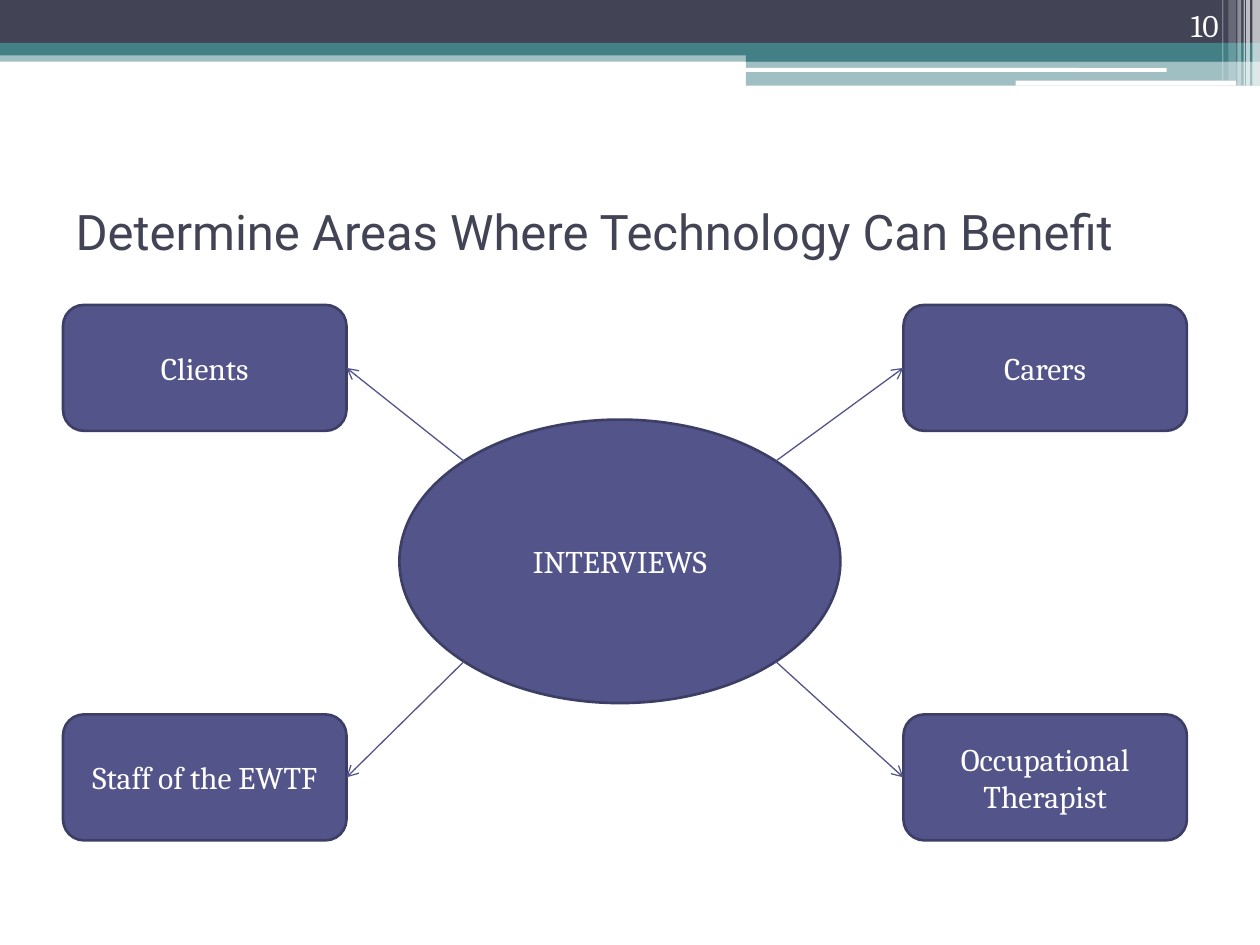
from dataclasses import dataclass
from math import sqrt

from lxml import etree
from pptx import Presentation
from pptx.dml.color import RGBColor
from pptx.enum.shapes import MSO_CONNECTOR, MSO_SHAPE
from pptx.enum.text import MSO_ANCHOR, PP_ALIGN
from pptx.oxml.ns import qn
from pptx.shapes.autoshape import Shape
from pptx.shapes.shapetree import SlideShapes
from pptx.util import Inches, Pt

RECT, ROUND, OVAL = MSO_SHAPE.RECTANGLE, MSO_SHAPE.ROUNDED_RECTANGLE, MSO_SHAPE.OVAL
STRAIGHT = MSO_CONNECTOR.STRAIGHT
LEFT, CENTER, RIGHT = PP_ALIGN.LEFT, PP_ALIGN.CENTER, PP_ALIGN.RIGHT
MIDDLE, BOTTOM = MSO_ANCHOR.MIDDLE, MSO_ANCHOR.BOTTOM
LEFT_SIDE, RIGHT_SIDE = 1, 3


@dataclass(frozen=True)
class Theme:
    dark: str = "424456"
    teal: str = "438086"
    white: str = "FFFFFF"
    node: str = "53548A"
    edge: str = "3D3E66"
    head: str = "Roboto"
    body: str = "Cambria"
    head_size: int = 28
    body_size: int = 18
    edge_width: float = 1.5
    arrow_width: float = 0.75


@dataclass(frozen=True)
class Box:
    left: float
    top: float
    width: float
    height: float

    def lengths(self) -> list[int]:
        return [Inches(v) for v in (self.left, self.top, self.width, self.height)]


@dataclass(frozen=True)
class Band:
    box: Box
    color: str
    alpha: int = 100
    kind: MSO_SHAPE = RECT


@dataclass(frozen=True)
class Node:
    text: str
    across: int  # -1 left of the hub, 1 right of it
    down: int  # -1 above the hub, 1 below it


THEME = Theme()
HUB = Box(3.17, 3.33, 3.5, 2.25)
NODE_SIZE = (2.25, 1)
NODE_LEFT = {-1: 0.5, 1: 7.17}
NODE_TOP = {-1: 2.42, 1: 5.67}

BANDS = [
    Band(Box(0, 0.4, 10, 0.09), THEME.teal, 50),
    Band(Box(0, 0, 10, 0.34), THEME.dark),
    Band(Box(0, 0.34, 10, 0.1), THEME.teal),
    Band(Box(5.92, 0.39, 4.08, 0.1), THEME.teal),
    Band(Box(5.92, 0.48, 4.08, 0.2), THEME.teal, 50),
    Band(Box(5.91, 0.54, 3.35, 0.03), THEME.white, kind=ROUND),
    Band(Box(8.06, 0.64, 1.75, 0.04), THEME.white, kind=ROUND),
]
# Thin upright stripes at the right edge: left, width, height, opacity
STRIPES = [
    (9.94, 0.06, 0.68, 65),
    (9.89, 0.03, 0.68, 65),
    (9.87, 0.01, 0.68, 60),
    (9.82, 0.03, 0.68, 40),
    (9.75, 0.06, 0.64, 20),
    (9.7, 0.01, 0.64, 30),
]
NODES = [
    Node("Clients", -1, -1),
    Node("Carers", 1, -1),
    Node("Staff of the EWTF", -1, 1),
    Node("Occupational Therapist", 1, 1),
]


def rgb(color: str) -> RGBColor:
    return RGBColor.from_string(color)


def write(shape: Shape, text: str, color: str = THEME.white, face: str = THEME.body,
          size: int = THEME.body_size, align: PP_ALIGN = CENTER,
          anchor: MSO_ANCHOR = MIDDLE) -> None:
    frame = shape.text_frame
    frame.word_wrap = True
    frame.vertical_anchor = anchor
    para = frame.paragraphs[0]
    para.alignment = align
    run = para.add_run()
    run.text = text
    for name, value in {"name": face, "size": Pt(size), "bold": False}.items():
        setattr(run.font, name, value)
    run.font.color.rgb = rgb(color)


def add_band(shapes: SlideShapes, band: Band) -> None:
    shape = shapes.add_shape(band.kind, *band.box.lengths())
    shape.shadow.inherit = False
    shape.line.fill.background()
    shape.fill.solid()
    shape.fill.fore_color.rgb = rgb(band.color)
    if band.alpha < 100:
        tint = shape.fill._xPr.find(f".//{qn('a:srgbClr')}")
        etree.SubElement(tint, qn("a:alpha"), val=str(band.alpha * 1000))


def add_node(shapes: SlideShapes, kind: MSO_SHAPE, box: Box, text: str) -> Shape:
    shape = shapes.add_shape(kind, *box.lengths())
    shape.shadow.inherit = False
    shape.fill.solid()
    shape.fill.fore_color.rgb = rgb(THEME.node)
    shape.line.color.rgb = rgb(THEME.edge)
    shape.line.width = Pt(THEME.edge_width)
    write(shape, text)
    return shape


def add_arrow(shapes: SlideShapes, node: Node, goal: Shape) -> None:
    # Start on the hub's outline, at its diagonal point facing the node
    x = HUB.left + HUB.width / 2 * (1 + node.across / sqrt(2))
    y = HUB.top + HUB.height / 2 * (1 + node.down / sqrt(2))
    start = Inches(x), Inches(y)
    arrow = shapes.add_connector(STRAIGHT, *start, *start)
    arrow.end_connect(goal, RIGHT_SIDE if node.across < 0 else LEFT_SIDE)
    arrow.line.color.rgb = rgb(THEME.node)
    arrow.line.width = Pt(THEME.arrow_width)
    etree.SubElement(arrow.line._get_or_add_ln(), qn("a:tailEnd"), type="arrow")
    etree.SubElement(arrow._element.spPr, qn("a:effectLst"))


def main() -> None:
    deck = Presentation()
    deck.slide_width, deck.slide_height = Inches(10), Inches(7.5)
    slide = deck.slides.add_slide(deck.slide_layouts.get_by_name("Title Only"))
    shapes = slide.shapes

    # Header bands and stripes
    stripes = [Band(Box(x, 0, w, h), THEME.white, a) for x, w, h, a in STRIPES]
    for band in BANDS + stripes:
        add_band(shapes, band)

    # Title
    title = shapes.title
    spot = Box(0.5, 1.25, 9, 1.17).lengths()
    for name, value in zip(("left", "top", "width", "height"), spot):
        setattr(title, name, value)
    write(title, "Determine Areas Where Technology Can Benefit",
          THEME.dark, THEME.head, THEME.head_size, LEFT)

    # Hub, the nodes around it and their arrows
    add_node(shapes, OVAL, HUB, "INTERVIEWS")
    for node in NODES:
        box = Box(NODE_LEFT[node.across], NODE_TOP[node.down], *NODE_SIZE)
        add_arrow(shapes, node, add_node(shapes, ROUND, box, node.text))

    # Page number
    page = shapes.add_textbox(*Box(8.94, 0, 0.83, 0.4).lengths())
    write(page, "10", align=RIGHT, anchor=BOTTOM)

    deck.save("out.pptx")


if __name__ == "__main__":
    main()
